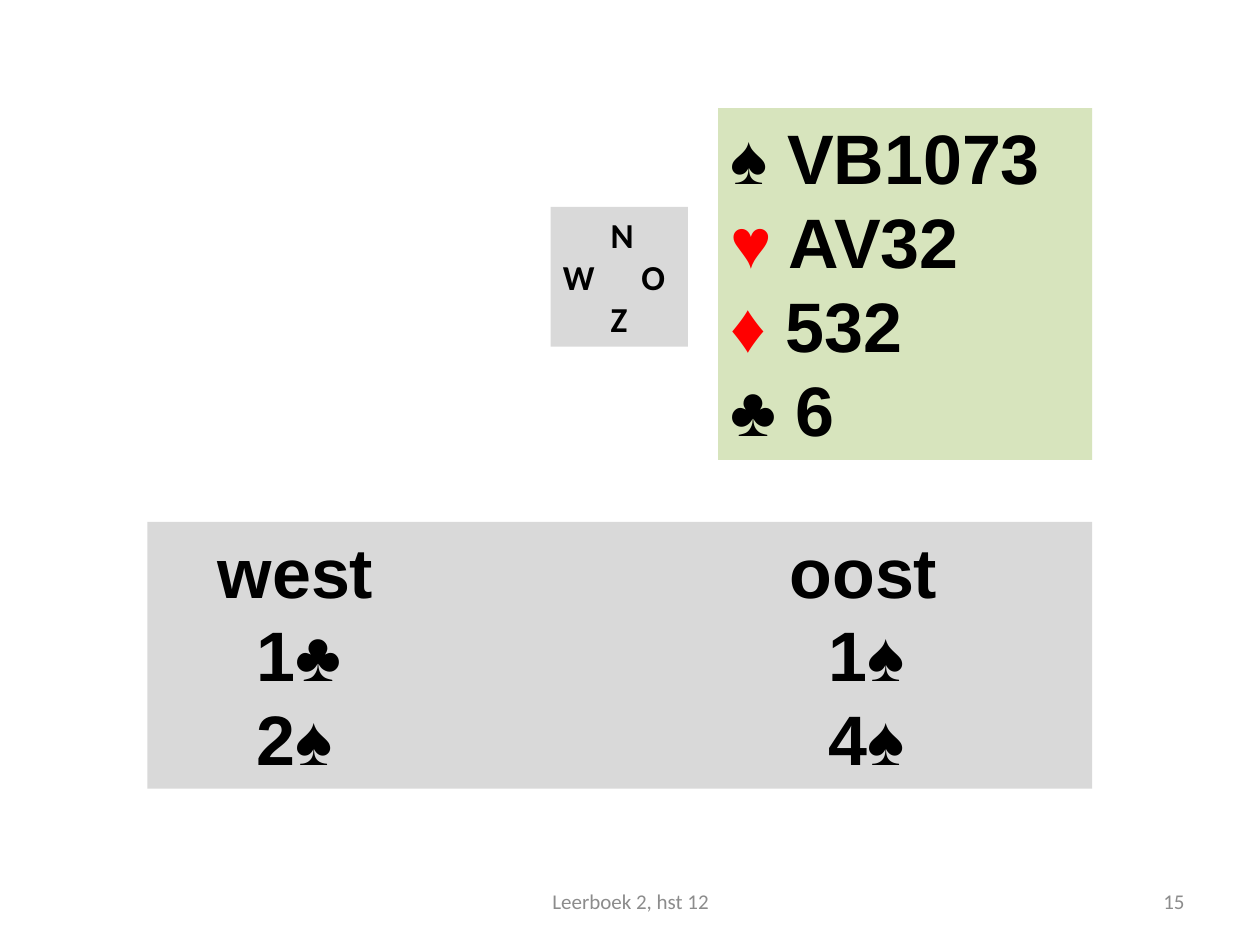
from dataclasses import dataclass

from lxml import etree
from pptx import Presentation
from pptx.dml.color import RGBColor
from pptx.enum.shapes import MSO_SHAPE
from pptx.enum.text import MSO_ANCHOR, MSO_AUTO_SIZE, PP_ALIGN
from pptx.oxml.ns import qn
from pptx.util import Cm, Pt

RECT = MSO_SHAPE.RECTANGLE
TOP, MIDDLE = MSO_ANCHOR.TOP, MSO_ANCHOR.MIDDLE
LEFT, CENTER, RIGHT = PP_ALIGN.LEFT, PP_ALIGN.CENTER, PP_ALIGN.RIGHT
FIT_SHAPE = MSO_AUTO_SIZE.SHAPE_TO_FIT_TEXT

COLORS = {
    "black": "000000",
    "red": "FF0000",
    "gray": "D9D9D9",
    "green": "D7E4BD",
    "footer": "8C8C8C",
}
RED_SUITS = "♥♦"


@dataclass
class Line:
    text: str
    tabs: tuple[float, ...] = ()


@dataclass
class Panel:
    box: tuple[float, float, float, float]
    fill: str
    font: str
    size: int
    lines: list[Line]


@dataclass
class Footer:
    box: tuple[float, float, float, float]
    text: str
    align: PP_ALIGN


PANELS = [
    Panel((11.1, 4.17, 2.77, 2.82), "gray", "Calibri", 20, [
        Line("\tN", (0.96,)),
        Line("W\tO", (1.58,)),
        Line("\tZ", (0.96,)),
    ]),
    Panel((2.97, 10.52, 19.05, 5.38), "gray", "Arial", 40, [
        Line("\twest\toost", (1.17, 12.7)),
        Line("\t1♣\t1♠", (1.96, 13.49)),
        Line("\t2♠\t4♠", (1.96, 13.49)),
    ]),
    Panel((14.48, 2.18, 7.54, 7.09), "green", "Arial", 40, [
        Line("♠ VB1073"),
        Line("♥ AV32"),
        Line("♦ 532"),
        Line("♣ 6"),
    ]),
]
FOOTERS = [
    Footer((18.21, 17.65, 5.92, 1.02), "15", RIGHT),
    Footer((8.69, 17.65, 8.05, 1.02), "Leerboek 2, hst 12", CENTER),
]


def set_tabs(p, tabs: tuple[float, ...]) -> None:
    tab_list = etree.SubElement(p._p.get_or_add_pPr(), qn("a:tabLst"))
    for pos in tabs:
        etree.SubElement(tab_list, qn("a:tab"), pos=str(Cm(pos)), algn="l")


def add_run(p, text: str, *, font: str, size: int, color: str, bold: bool = False) -> None:
    r = p.add_run()
    r.text = text
    r.font.name = font
    r.font.size = Pt(size)
    r.font.bold = bold
    r.font.color.rgb = RGBColor.from_string(COLORS[color])


def write(tf, lines: list[Line], *, align: PP_ALIGN = LEFT, anchor: MSO_ANCHOR = TOP,
          color: str = "black", **run_format) -> None:
    """Fill a text frame, colouring a leading red suit symbol."""
    tf.word_wrap = True
    tf.vertical_anchor = anchor
    for i, line in enumerate(lines):
        p = tf.paragraphs[0] if i == 0 else tf.add_paragraph()
        p.alignment = align
        if line.tabs:
            set_tabs(p, line.tabs)
        text = line.text
        if text[0] in RED_SUITS:
            add_run(p, text[0], color="red", **run_format)
            text = text[1:]
        add_run(p, text, color=color, **run_format)


def add_panel(s, panel: Panel) -> None:
    sp = s.shapes.add_shape(RECT, *map(Cm, panel.box))
    sp.shadow.inherit = False
    sp.fill.solid()
    sp.fill.fore_color.rgb = RGBColor.from_string(COLORS[panel.fill])
    sp.line.fill.background()
    write(sp.text_frame, panel.lines, font=panel.font, size=panel.size, bold=True)
    sp.text_frame.auto_size = FIT_SHAPE


def add_footer(s, footer: Footer) -> None:
    sp = s.shapes.add_textbox(*map(Cm, footer.box))
    write(sp.text_frame, [Line(footer.text)], align=footer.align, anchor=MIDDLE,
          color="footer", font="Calibri", size=12)


def main() -> None:
    prs = Presentation()
    prs.slide_width, prs.slide_height = Cm(25.4), Cm(19.05)
    s = prs.slides.add_slide(prs.slide_layouts[6])
    for panel in PANELS:
        add_panel(s, panel)
    for footer in FOOTERS:
        add_footer(s, footer)
    prs.save("out.pptx")


if __name__ == "__main__":
    main()
